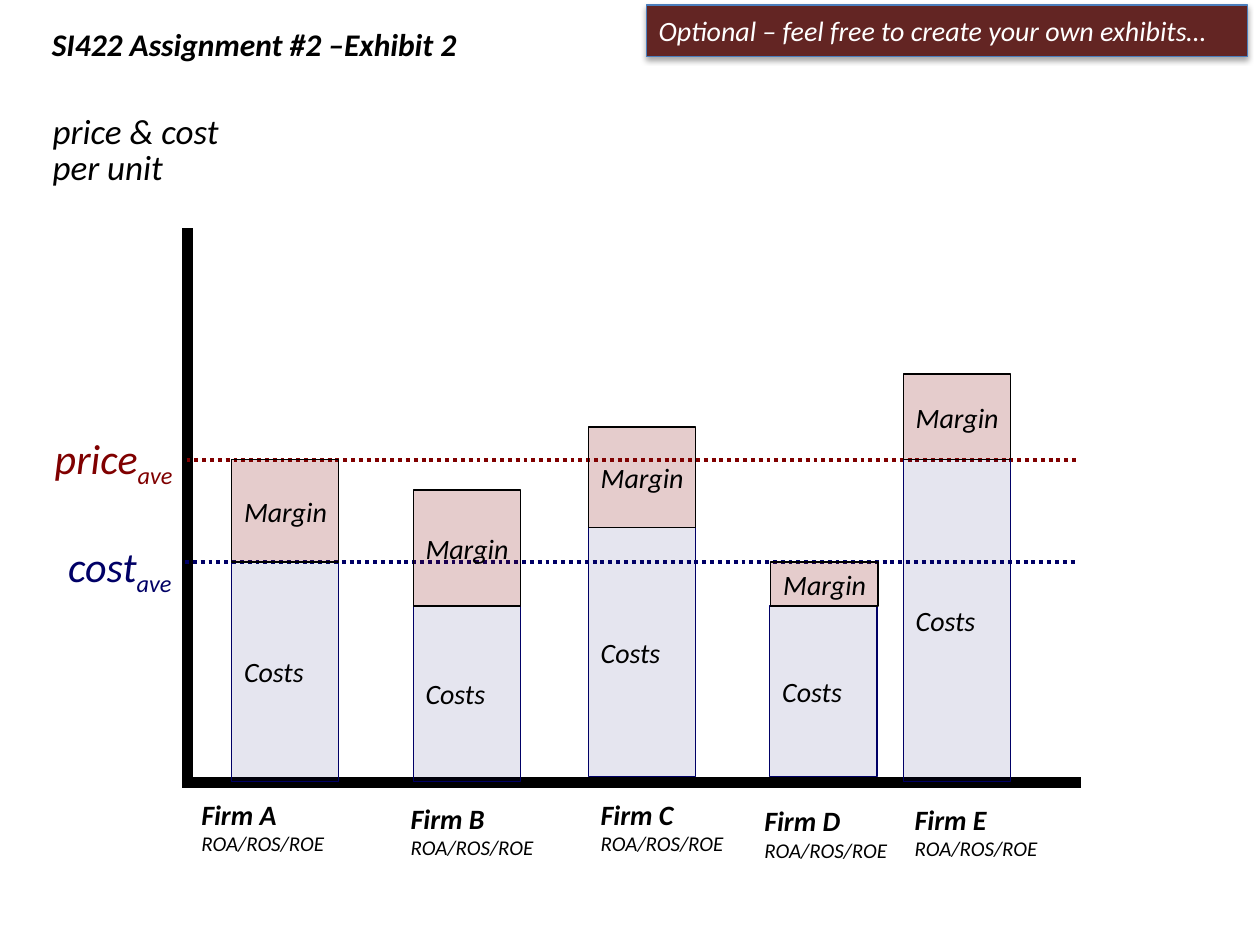
from dataclasses import dataclass

from lxml import etree
from pptx import Presentation
from pptx.dml.color import RGBColor
from pptx.enum.dml import MSO_LINE
from pptx.enum.shapes import MSO_CONNECTOR, MSO_SHAPE
from pptx.enum.text import MSO_ANCHOR, PP_ALIGN
from pptx.oxml.ns import qn
from pptx.shapes.autoshape import Shape
from pptx.slide import Slide
from pptx.text.text import TextFrame, _Paragraph
from pptx.util import Cm, Pt

BLACK = RGBColor(0x00, 0x00, 0x00)
WHITE = RGBColor(0xFF, 0xFF, 0xFF)
NAVY = RGBColor(0x00, 0x00, 0x66)
MAROON = RGBColor(0x80, 0x00, 0x00)
BANNER_FILL = RGBColor(0x63, 0x25, 0x23)
BANNER_EDGE = RGBColor(0x4B, 0x7E, 0xBC)

LEFT = PP_ALIGN.LEFT
RIGHT = PP_ALIGN.RIGHT
MIDDLE = MSO_ANCHOR.MIDDLE
RECTANGLE = MSO_SHAPE.RECTANGLE
STRAIGHT = MSO_CONNECTOR.STRAIGHT
DOTTED = MSO_LINE.ROUND_DOT

FONT = "Calibri"
TITLE_ONLY = 5
BAR_WIDTH = 2.16
PRICE_LEVEL = 9.27
COST_LEVEL = 11.33
LOW_COST_LEVEL = 12.22
BAR_BASE = 15.75


@dataclass(frozen=True)
class Firm:
    name: str
    cost_left: float
    margin_left: float
    price_top: float
    cost_top: float
    base: float
    label_left: float
    label_top: float
    label_width: float


@dataclass(frozen=True)
class Rule:
    x1: float
    y1: float
    x2: float
    y2: float
    color: RGBColor
    weight: float
    dash: MSO_LINE | None = None


@dataclass(frozen=True)
class Average:
    word: str
    left: float
    top: float
    width: float
    color: RGBColor


FIRMS = [
    Firm("Firm A", 4.67, 4.67, PRICE_LEVEL, COST_LEVEL, BAR_BASE, 3.81, 15.95, 4.34),
    Firm("Firm B", 8.33, 8.33, 9.88, LOW_COST_LEVEL, BAR_BASE, 8.03, 16.03, 4.27),
    Firm("Firm C", 11.86, 11.86, 8.61, 10.64, 15.65, 11.86, 15.95, 3.3),
    Firm("Firm D", 15.52, 15.54, COST_LEVEL, LOW_COST_LEVEL, 15.65, 15.16, 16.08, 3.38),
    Firm("Firm E", 18.21, 18.21, 7.54, PRICE_LEVEL, BAR_BASE, 18.19, 16.05, 4.47),
]

RULES = [
    Rule(3.78, 4.6, 3.78, 15.88, BLACK, 6),
    Rule(21.79, 15.77, 3.81, 15.77, BLACK, 6),
    Rule(3.73, COST_LEVEL, 21.69, COST_LEVEL, NAVY, 2.25, DOTTED),
    Rule(3.76, PRICE_LEVEL, 21.74, PRICE_LEVEL, MAROON, 2.25, DOTTED),
]

AVERAGES = [
    Average("cost", 0.41, 10.77, 3.3, NAVY),
    Average("price", 0.71, 8.59, 3.02, MAROON),
]


def style(paragraph: _Paragraph, size: float, color: RGBColor = BLACK,
          bold: bool = False, align: PP_ALIGN = LEFT) -> None:
    paragraph.alignment = align
    font = paragraph.font
    font.name = FONT
    font.size = Pt(size)
    font.italic = True
    font.bold = bold
    font.color.rgb = color


def add_text(slide: Slide, left: float, top: float, width: float, height: float) -> TextFrame:
    frame = slide.shapes.add_textbox(Cm(left), Cm(top), Cm(width), Cm(height)).text_frame
    frame.word_wrap = True
    return frame


def add_rectangle(slide: Slide, left: float, top: float, width: float, height: float,
                  fill: RGBColor, edge: RGBColor) -> Shape:
    rectangle = slide.shapes.add_shape(RECTANGLE, Cm(left), Cm(top), Cm(width), Cm(height))
    rectangle.fill.solid()
    rectangle.fill.fore_color.rgb = fill
    rectangle.line.color.rgb = edge
    rectangle.line.width = Pt(0.75)
    rectangle.text_frame.vertical_anchor = MIDDLE
    return rectangle


def add_rule(slide: Slide, rule: Rule) -> None:
    connector = slide.shapes.add_connector(
        STRAIGHT, Cm(rule.x1), Cm(rule.y1), Cm(rule.x2), Cm(rule.y2))
    connector.line.color.rgb = rule.color
    connector.line.width = Pt(rule.weight)
    if rule.dash is not None:
        connector.line.dash_style = rule.dash
    etree.SubElement(connector._element.spPr, qn("a:effectLst"))


def add_segment(slide: Slide, word: str, left: float, top: float, bottom: float,
                fill: RGBColor, edge: RGBColor, opacity: int) -> None:
    segment = add_rectangle(slide, left, top, BAR_WIDTH, bottom - top, fill, edge)
    segment.shadow.inherit = False
    tint = segment._element.spPr.find(qn("a:solidFill")).find(qn("a:srgbClr"))
    etree.SubElement(tint, qn("a:alpha")).set("val", str(opacity * 1000))
    segment.text_frame.word_wrap = False
    segment.text_frame.text = word
    style(segment.text_frame.paragraphs[0], 16)


def add_firm(slide: Slide, firm: Firm) -> None:
    add_segment(slide, "Costs", firm.cost_left, firm.cost_top, firm.base, NAVY, NAVY, 10)
    add_segment(slide, "Margin", firm.margin_left, firm.price_top, firm.cost_top,
                MAROON, BLACK, 20)
    label = add_text(slide, firm.label_left, firm.label_top, firm.label_width, 1.45)
    label.text = f"{firm.name}\nROA/ROS/ROE"
    name, ratios = label.paragraphs
    style(name, 16, bold=True)
    style(ratios, 12)


def add_average(slide: Slide, average: Average) -> None:
    frame = add_text(slide, average.left, average.top, average.width, 1.27)
    paragraph = frame.paragraphs[0]
    style(paragraph, 24, average.color, align=RIGHT)
    paragraph.add_run().text = average.word
    subscript = paragraph.add_run()
    subscript.text = "ave"
    subscript._r.get_or_add_rPr().set("baseline", "-25000")


def main() -> None:
    deck = Presentation()
    deck.slide_width, deck.slide_height = Cm(25.4), Cm(19.05)
    slide = deck.slides.add_slide(deck.slide_layouts[TITLE_ONLY])

    title = slide.shapes.title
    title.left, title.top, title.width, title.height = Cm(0.79), Cm(0), Cm(21.87), Cm(1.75)
    title.text_frame.text = "SI422 Assignment #2 –Exhibit 2"
    title.text_frame.vertical_anchor = MIDDLE
    style(title.text_frame.paragraphs[0], 18, bold=True)

    axis_title = add_text(slide, 0.81, 2.21, 4.8, 1.7)
    axis_title.text = "price & cost per unit"
    axis_title.paragraphs[0].line_spacing = 0.85
    style(axis_title.paragraphs[0], 20)

    for average in AVERAGES:
        add_average(slide, average)
    for rule in RULES:
        add_rule(slide, rule)
    for firm in FIRMS:
        add_firm(slide, firm)

    banner = add_rectangle(slide, 13.03, 0.1, 12.12, 1.04, BANNER_FILL, BANNER_EDGE)
    banner.text_frame.text = "Optional – feel free to create your own exhibits…"
    style(banner.text_frame.paragraphs[0], 16, WHITE)

    deck.save("out.pptx")


if __name__ == "__main__":
    main()
